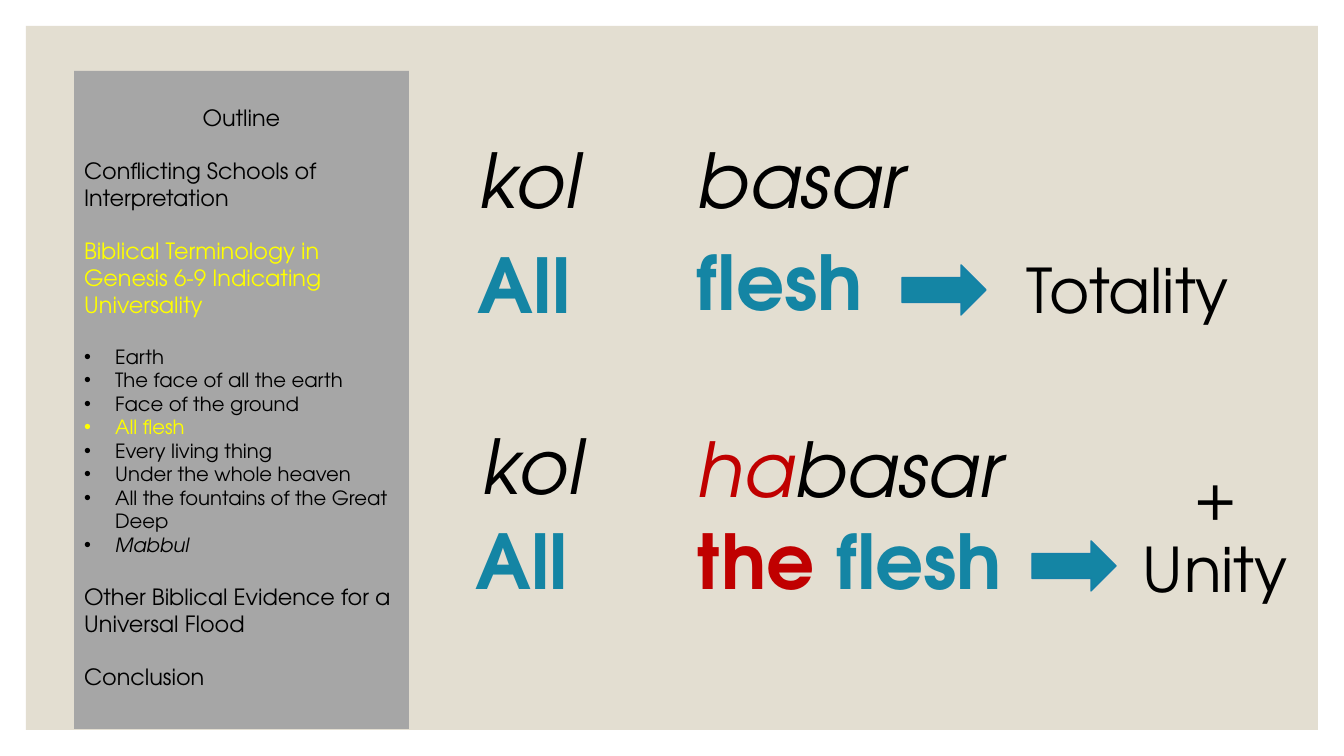
from dataclasses import dataclass

from lxml import etree
from pptx import Presentation
from pptx.dml.color import RGBColor
from pptx.enum.shapes import MSO_SHAPE
from pptx.enum.text import MSO_ANCHOR, MSO_AUTO_SIZE, PP_ALIGN
from pptx.oxml.ns import qn
from pptx.util import Emu, Pt

RECT, ARROW = MSO_SHAPE.RECTANGLE, MSO_SHAPE.RIGHT_ARROW
LEFT, MID = PP_ALIGN.LEFT, PP_ALIGN.CENTER
TOP = MSO_ANCHOR.TOP
FIXED = MSO_AUTO_SIZE.NONE
SCALE = 914400 / 100.8
FONT = "TeX Gyre Adventor"
HUES = {
    "black": "000000", "teal": "1485A4", "edge": "1580A9", "red": "C00000",
    "yellow": "FFFF00", "sand": "E3DED1", "gray": "A6A6A6",
}


@dataclass
class Box:
    left: int
    top: int
    width: int
    height: int


@dataclass
class Part:
    text: str
    hue: str = "black"


@dataclass
class Word:
    box: Box
    lines: list[list[Part]]
    size: int = 54
    bold: bool = False
    slant: bool = False


@dataclass
class Item:
    text: str
    hue: str = "black"
    dot: bool = False
    gap: int = 0
    slant: bool = False


PANEL = Box(74, 71, 335, 658)
HEAD = Box(74, 104, 335, 27)
LIST = Box(74, 157, 335, 560)
GAP = 19

ITEMS = [
    Item("Conflicting Schools of Interpretation"),
    Item("Biblical Terminology in Genesis 6-9 Indicating Universality", "yellow", gap=GAP),
    Item("Earth", dot=True, gap=GAP),
    Item("The face of all the earth", dot=True),
    Item("Face of the ground", dot=True),
    Item("All flesh", "yellow", dot=True),
    Item("Every living thing", dot=True),
    Item("Under the whole heaven", dot=True),
    Item("All the fountains of the Great Deep", dot=True),
    Item("Mabbul", dot=True, slant=True),
    Item("Other Biblical Evidence for a Universal Flood", gap=GAP),
    Item("Conclusion", gap=GAP),
]

WORDS = [
    Word(Box(468, 128, 124, 102), [[Part("kol")]], slant=True),
    Word(Box(686, 128, 230, 102), [[Part("basar")]], slant=True),
    Word(Box(467, 233, 114, 102), [[Part("All", "teal")]], bold=True),
    Word(Box(686, 230, 188, 102), [[Part("flesh", "teal")]], bold=True),
    Word(Box(1013, 247, 230, 85), [[Part("Totality")]], size=44),
    Word(Box(471, 414, 124, 102), [[Part("kol")]], slant=True),
    Word(Box(686, 417, 328, 102), [[Part("ha", "red"), Part("basar")]], slant=True),
    Word(Box(465, 509, 114, 102), [[Part("All", "teal")]], bold=True),
    Word(Box(686, 509, 328, 102), [[Part("the", "red"), Part(" flesh", "teal")]], bold=True),
    Word(Box(1133, 452, 165, 159), [[Part("+")], [Part("Unity")]], size=44),
]

ARROWS = [Box(902, 265, 84, 50), Box(1032, 541, 84, 50)]


def px(count: int) -> Emu:
    return Emu(round(count * SCALE))


def hue(name: str) -> RGBColor:
    return RGBColor.from_string(HUES[name])


def span(box: Box) -> tuple[Emu, Emu, Emu, Emu]:
    return px(box.left), px(box.top), px(box.width), px(box.height)


def write(para, parts: list[Part], *, size: int, align=MID, bold: bool = False,
          slant: bool = False, gap: int = 0) -> None:
    para.alignment = align
    para.space_before = Pt(gap)
    for part in parts:
        run = para.add_run()
        run.text = part.text
        font = run.font
        font.name, font.size = FONT, Pt(size)
        font.bold, font.italic = bold, slant
        font.color.rgb = hue(part.hue)


def line(frame, index: int):
    return frame.add_paragraph() if index else frame.paragraphs[0]


def draw(slide, kind, box: Box, fill: str, edge: str = ""):
    shape = slide.shapes.add_shape(kind, *span(box))
    shape.shadow.inherit = False
    shape.fill.solid()
    shape.fill.fore_color.rgb = hue(fill)
    if edge:
        shape.line.color.rgb = hue(edge)
        shape.line.width = Pt(1)
    else:
        shape.line.fill.background()
    return shape


def place(holder, box: Box, side: int):
    holder.left, holder.top, holder.width, holder.height = span(box)
    frame = holder.text_frame
    frame.word_wrap = True
    frame.auto_size = FIXED
    frame.vertical_anchor = TOP
    frame.margin_top = frame.margin_bottom = 0
    frame.margin_left = frame.margin_right = px(side)
    return frame


def mark(para, dot: bool) -> None:
    props = para._p.get_or_add_pPr()
    hang = px(31) if dot else 0
    props.set("marL", str(hang))
    props.set("indent", str(-hang))
    if dot:
        etree.SubElement(props, qn("a:buFont")).set("typeface", "Arial")
        etree.SubElement(props, qn("a:buChar")).set("char", "•")
    else:
        etree.SubElement(props, qn("a:buNone"))


def outline(slide) -> None:
    head = place(slide.shapes.title, HEAD, 0)
    write(head.paragraphs[0], [Part("Outline")], size=16)
    body = place(slide.placeholders[1], LIST, 10)
    for index, item in enumerate(ITEMS):
        para = line(body, index)
        write(para, [Part(item.text, item.hue)], size=14 if item.dot else 16,
              align=LEFT, slant=item.slant, gap=item.gap)
        mark(para, item.dot)


def label(slide, word: Word) -> None:
    frame = slide.shapes.add_textbox(*span(word.box)).text_frame
    frame.word_wrap = False
    for index, parts in enumerate(word.lines):
        write(line(frame, index), parts, size=word.size, bold=word.bold, slant=word.slant)


def main() -> None:
    deck = Presentation()
    deck.slide_width, deck.slide_height = px(1344), px(756)
    slide = deck.slides.add_slide(deck.slide_layouts[1])
    sheet = draw(slide, RECT, Box(26, 26, 1292, 704), "sand")
    panel = draw(slide, RECT, PANEL, "gray")
    first = slide.shapes.title.element
    for back in (sheet, panel):
        first.addprevious(back.element)
    outline(slide)
    for word in WORDS:
        label(slide, word)
    for box in ARROWS:
        draw(slide, ARROW, box, "teal", "edge")
    deck.save("out.pptx")


if __name__ == "__main__":
    main()
